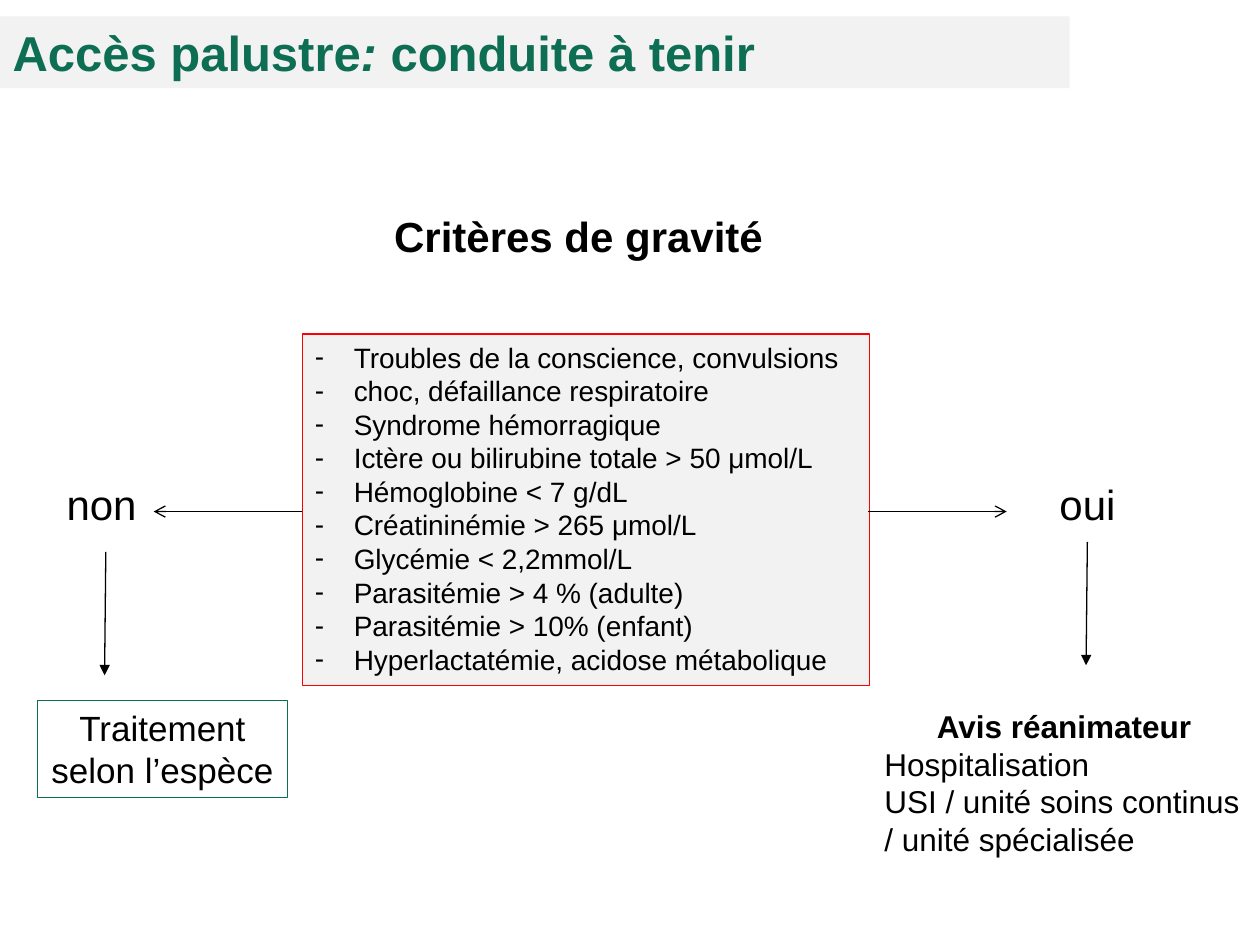
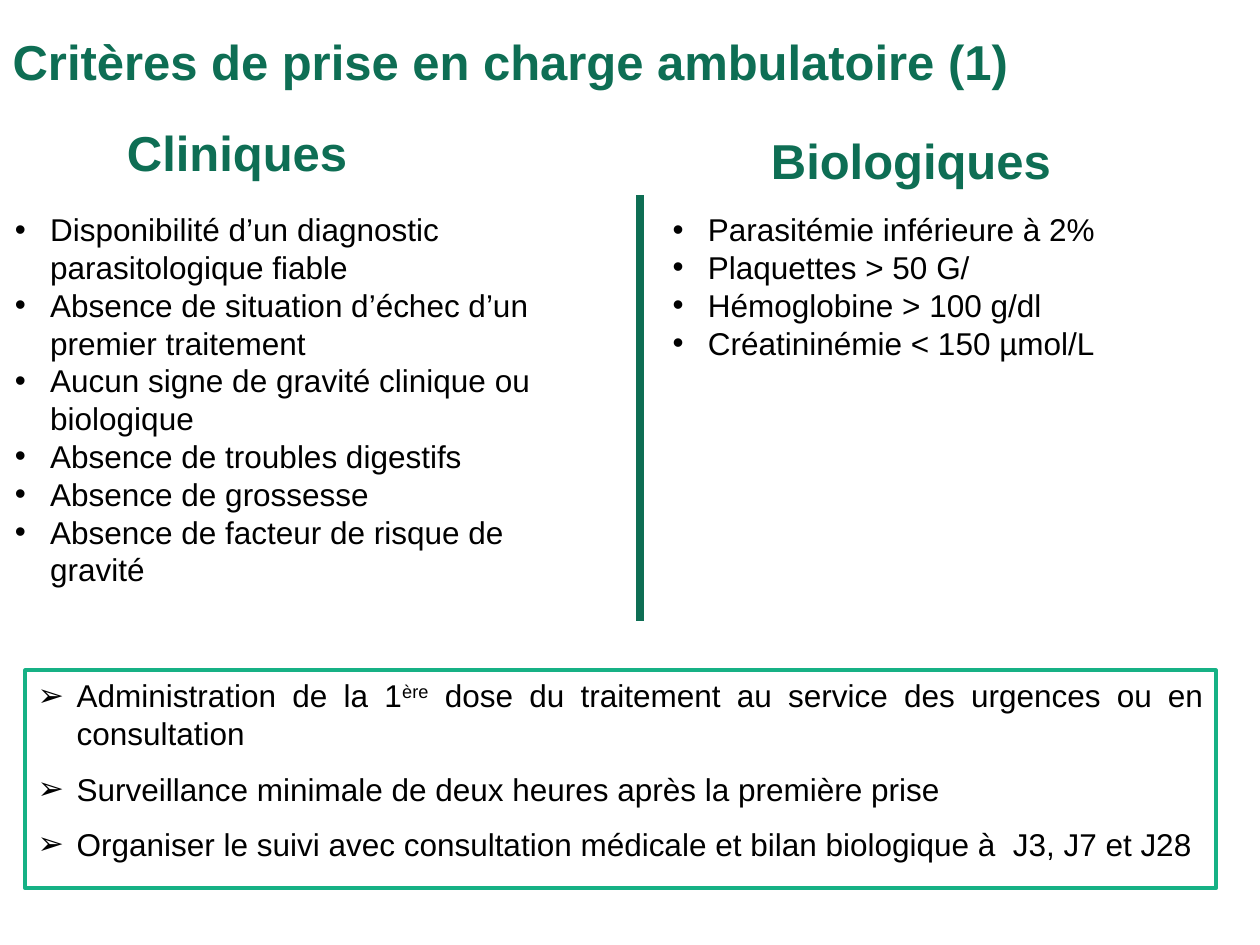
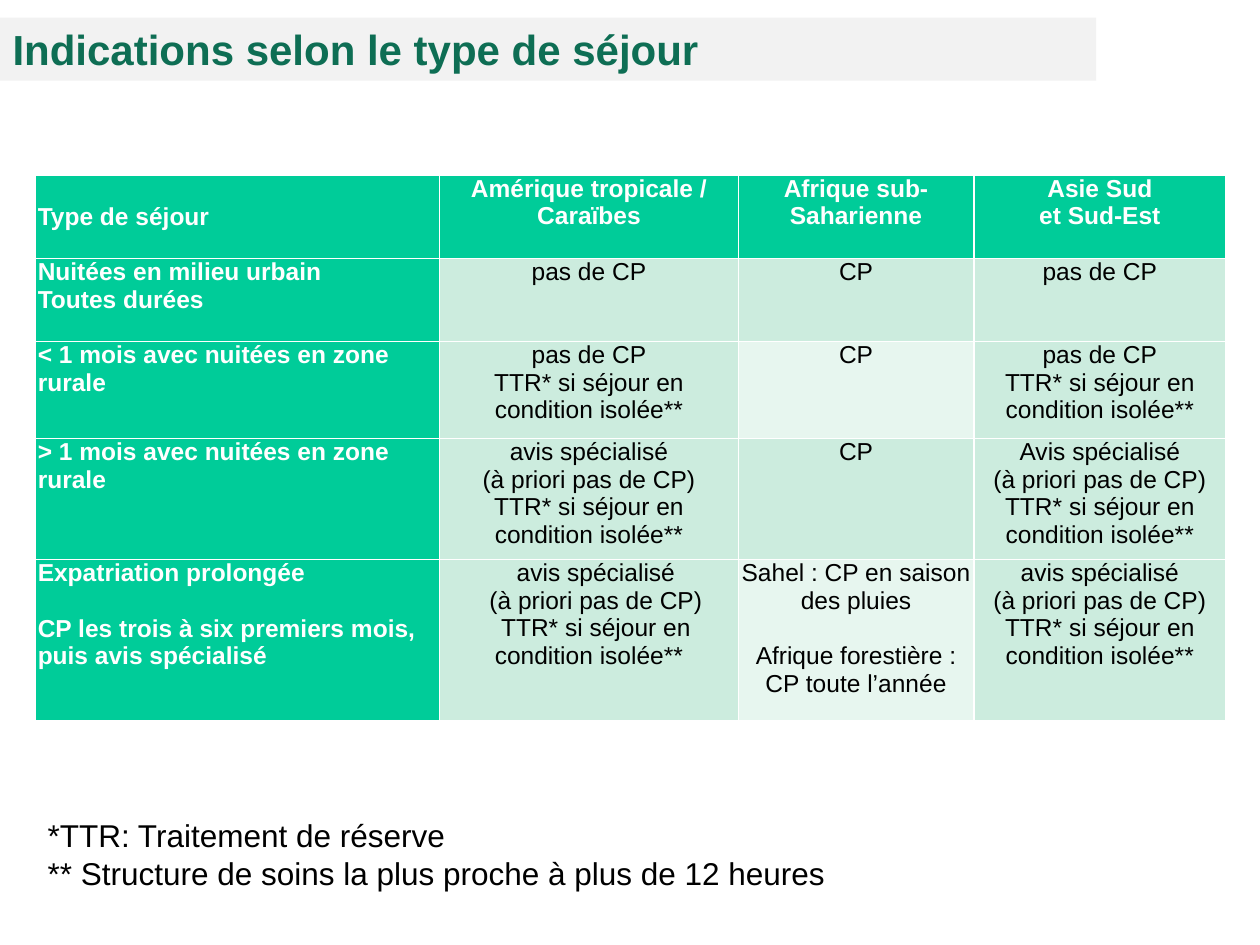
from lxml.etree import SubElement
from pptx import Presentation
from pptx.dml.color import RGBColor
from pptx.enum.shapes import MSO_CONNECTOR as Connector, MSO_SHAPE as Shape
from pptx.enum.text import MSO_ANCHOR as Anchor, MSO_AUTO_SIZE as AutoSize, PP_ALIGN as Align
from pptx.oxml.ns import qn
from pptx.util import Inches, Pt

FONT = "Arial"
BLACK = RGBColor(0, 0, 0)
WHITE = RGBColor(255, 255, 255)
RED = RGBColor(255, 0, 0)
DARK_GREEN = RGBColor(0x0E, 0x6E, 0x54)
FRAME_GREEN = RGBColor(0x16, 0xB1, 0x85)
HEADER_GREEN = RGBColor(0x00, 0xCC, 0x99)
CELL_GREEN = RGBColor(0xCC, 0xEC, 0xDE)
PALE_GREEN = RGBColor(0xE7, 0xF6, 0xEF)
BAND_GREY = RGBColor(0xF2, 0xF2, 0xF2)

presentation = Presentation()
presentation.slide_width = Inches(10)
presentation.slide_height = Inches(7.5)

# Grid of 100 columns by 75 rows
COLUMN = presentation.slide_width / 100
ROW = presentation.slide_height / 75


def write(frame, paragraphs, size, color=BLACK, bold=False, align=Align.LEFT,
          bullet=None, indent=0, gap=0):
    """Fill a frame; a paragraph is a string or a list of (text, style) runs."""
    for index, content in enumerate(paragraphs):
        paragraph = frame.add_paragraph() if index else frame.paragraphs[0]
        paragraph.alignment = align
        properties = paragraph._p.get_or_add_pPr()
        if bullet:
            properties.set("marL", str(Inches(indent)))
            properties.set("indent", str(-Inches(indent)))
            SubElement(properties, qn("a:buFont"), typeface=FONT)
            SubElement(properties, qn("a:buChar"), char=bullet)
        if index and gap:
            paragraph.space_before = Pt(gap)
        runs = [(content, None)] if isinstance(content, str) else content
        for text, style in runs:
            run = paragraph.add_run()
            run.text = text
            run.font.name, run.font.size = FONT, Pt(size)
            run.font.bold = bold or style == "bold"
            run.font.italic = style == "italic"
            run.font.color.rgb = color
            if style == "superscript":
                run._r.get_or_add_rPr().set("baseline", "30000")


def add_box(slide, place, fill=None, line=None, line_width=0.75, wrap=True):
    """Add a plain rectangle at (column, row, columns, rows)."""
    left, top, width, height = place
    box = slide.shapes.add_shape(Shape.RECTANGLE, int(left * COLUMN), int(top * ROW),
                                 int(width * COLUMN), int(height * ROW))
    box.shadow.inherit = False
    box.fill.background()
    box.line.fill.background()
    if fill:
        box.fill.solid()
        box.fill.fore_color.rgb = fill
    if line:
        box.line.color.rgb = line
        box.line.width = Pt(line_width)
    box.text_frame.word_wrap = wrap
    box.text_frame.vertical_anchor = Anchor.TOP
    return box


# Slides and their titles: runs, size, place, grey band
titles = [
    ([("Accès palustre", None), (": ", "italic"), ("conduite à tenir", None)],
     28, (0, 1.3, 84.9, 5.7), True),
    ("Critères de prise en charge ambulatoire (1)", 28, (0, 2.1, 92.7, 5.5), False),
    ("Indications selon le type de séjour", 24, (0, 1.4, 87, 5), True),
]
slides = []
for content, size, (left, top, width, height), has_band in titles:
    slide = presentation.slides.add_slide(presentation.slide_layouts[5])
    title = slide.shapes.title
    title.left, title.top = int(left * COLUMN), int(top * ROW)
    title.width, title.height = int(width * COLUMN), int(height * ROW)
    if has_band:
        title.fill.solid()
        title.fill.fore_color.rgb = BAND_GREY
    title.text_frame.auto_size = AutoSize.NONE
    title.text_frame.vertical_anchor = Anchor.MIDDLE
    write(title.text_frame, [content], size, DARK_GREEN, bold=True)
    slides.append(slide)
severity_slide, outpatient_slide, stay_slide = slides

# Severity criteria
criteria = add_box(severity_slide, (24, 26.5, 45, 27.9), BAND_GREY, RED)
write(criteria.text_frame, [
    "Troubles de la conscience, convulsions",
    "choc, défaillance respiratoire",
    "Syndrome hémorragique",
    "Ictère ou bilirubine totale > 50 μmol/L",
    "Hémoglobine < 7 g/dL",
    "Créatininémie > 265 μmol/L",
    "Glycémie < 2,2mmol/L",
    "Parasitémie > 4 % (adulte)",
    "Parasitémie > 10% (enfant)",
    "Hyperlactatémie, acidose métabolique",
], 16, bullet="-", indent=0.31)

# Headings of the decision tree and of the two outpatient columns
headings = [
    (severity_slide, "Critères de gravité", (30.3, 16.2, 31.6, 5), 24, BLACK, True),
    (severity_slide, "oui", (83.1, 37.5, 6.5, 5), 24, BLACK, False),
    (severity_slide, "non", (4.3, 37.5, 7.6, 5), 24, BLACK, False),
    (outpatient_slide, "Cliniques", (9.1, 9.2, 19.7, 5.7), 28, DARK_GREEN, True),
    (outpatient_slide, "Biologiques", (60.2, 9.9, 24.5, 5.7), 28, DARK_GREEN, True),
]
for slide, text, place, size, color, bold in headings:
    heading = add_box(slide, place, wrap=False)
    write(heading.text_frame, [text], size, color, bold)

# Outcomes of the decision
treatment = add_box(severity_slide, (3, 55.6, 19.8, 7.7), line=DARK_GREEN, wrap=False)
write(treatment.text_frame, ["Traitement", "selon l’espèce"], 20, align=Align.CENTER)

intensive_care = add_box(severity_slide, (69.2, 55.6, 30.5, 13.1), wrap=False)
write(intensive_care.text_frame, [
    [("Avis réanimateur", "bold")],
    "Hospitalisation",
    "USI / unité soins continus",
    "/ unité spécialisée",
], 18)
intensive_care.text_frame.paragraphs[0].alignment = Align.CENTER

# Arrows of the tree and divider between the outpatient columns
lines = [
    (severity_slide, (86.3, 43), (86.2, 52.8), BLACK, 0.75, "triangle"),
    (severity_slide, (8.4, 43.8), (8.3, 53.6), BLACK, 0.75, "triangle"),
    (severity_slide, (68.9, 40.6), (79.9, 40.6), BLACK, 0.75, "arrow"),
    (severity_slide, (24, 40.6), (12.2, 40.6), BLACK, 0.75, "arrow"),
    (outpatient_slide, (50.8, 15.5), (50.8, 49.3), DARK_GREEN, 4.5, None),
]
for slide, start, end, color, width, head in lines:
    connector = slide.shapes.add_connector(
        Connector.STRAIGHT, int(start[0] * COLUMN), int(start[1] * ROW),
        int(end[0] * COLUMN), int(end[1] * ROW))
    connector.line.color.rgb = color
    connector.line.width = Pt(width)
    properties = connector._element.spPr
    if head:
        SubElement(properties.find(qn("a:ln")), qn("a:tailEnd"), type=head)
    SubElement(properties, qn("a:effectLst"))

# Outpatient criteria
outpatient_lists = [
    ((0.2, 16.2, 47.2, 31.3), [
        "Disponibilité d’un diagnostic parasitologique fiable",
        "Absence de situation d’échec d’un premier traitement",
        "Aucun signe de gravité clinique ou biologique",
        "Absence de troubles digestifs",
        "Absence de grossesse",
        "Absence de facteur de risque de gravité",
    ]),
    ((52.4, 16.2, 41, 13.1), [
        "Parasitémie inférieure à 2%",
        "Plaquettes > 50 G/",
        "Hémoglobine > 100 g/dl",
        "Créatininémie < 150 µmol/L",
    ]),
]
for place, items in outpatient_lists:
    box = add_box(outpatient_slide, place)
    write(box.text_frame, items, 18, bullet="•", indent=0.28)

# Outpatient follow-up
follow_up = add_box(outpatient_slide, (2, 53.2, 94.5, 17.3), line=FRAME_GREEN, line_width=2.25)
write(follow_up.text_frame, [
    [("Administration de la 1", None), ("ère", "superscript"),
     (" dose du traitement au service des urgences ou en consultation", None)],
    "Surveillance minimale de deux heures après la première prise",
    "Organiser le suivi avec consultation médicale et bilan biologique à  J3, J7 et J28",
], 18, align=Align.JUSTIFY, bullet="➢", indent=0.31, gap=10)
follow_up.text_frame.paragraphs[-1].alignment = Align.LEFT

# Table of indications by type of stay
RESERVE = "TTR* si séjour en condition isolée**"
NO_PRIOR = "(à priori pas de CP)"
table_rows = [
    [["Type de séjour"], ["Amérique tropicale / Caraïbes"],
     ["Afrique sub-Saharienne"], ["Asie Sud", "et Sud-Est"]],
    [["Nuitées en milieu urbain", "Toutes durées"], ["pas de CP"], ["CP"], ["pas de CP"]],
    [["< 1 mois avec nuitées en zone rurale"], ["pas de CP", RESERVE], ["CP"],
     ["pas de CP", RESERVE]],
    [["> 1 mois avec nuitées en zone rurale"], ["avis spécialisé", NO_PRIOR, RESERVE], ["CP"],
     ["Avis spécialisé", NO_PRIOR, RESERVE]],
    [["Expatriation prolongée", "CP les trois à six premiers mois, puis avis spécialisé"],
     ["avis spécialisé", NO_PRIOR, RESERVE],
     ["Sahel : CP en saison des pluies", "Afrique forestière : CP toute l’année"],
     ["avis spécialisé", NO_PRIOR, RESERVE]],
]
column_widths = [32.1, 23.7, 18.7, 20]
row_heights = [6.6, 6.6, 7.7, 9.6, 12.8]
pale_cells = {(2, 2), (4, 2)}
spaced_cells = {(4, 0), (4, 2)}

table = stay_slide.shapes.add_table(
    len(row_heights), len(column_widths), int(2.8 * COLUMN), int(13.9 * ROW),
    int(sum(column_widths) * COLUMN), int(sum(row_heights) * ROW)).table
table.horz_banding = False
for column, width in zip(table.columns, column_widths):
    column.width = int(width * COLUMN)
for row, height in zip(table.rows, row_heights):
    row.height = int(height * ROW)

for row_index, row_cells in enumerate(table_rows):
    for column_index, paragraphs in enumerate(row_cells):
        position = (row_index, column_index)
        is_header = row_index == 0 or column_index == 0
        cell = table.cell(*position)
        cell.margin_left = cell.margin_right = Inches(0.02)
        cell.margin_top = cell.margin_bottom = 0
        cell.vertical_anchor = Anchor.MIDDLE if position == (0, 0) else Anchor.TOP
        cell.fill.solid()
        cell.fill.fore_color.rgb = (HEADER_GREEN if is_header
                                    else PALE_GREEN if position in pale_cells else CELL_GREEN)
        write(cell.text_frame, paragraphs, 14, WHITE if is_header else BLACK, is_header,
              Align.CENTER if column_index else Align.LEFT,
              gap=16 if position in spaced_cells else 0)

# First lines of the long-stay cell for America sit slightly to the right
for paragraph in table.cell(4, 1).text_frame.paragraphs:
    paragraph._p.get_or_add_pPr().set("indent", str(Inches(0.11)))

# Table notes
notes = add_box(stay_slide, (2.8, 64.3, 80.3, 7.1))
write(notes.text_frame, [
    "*TTR: Traitement de réserve",
    "** Structure de soins la plus proche à plus de 12 heures",
], 18)

presentation.save("out.pptx")
